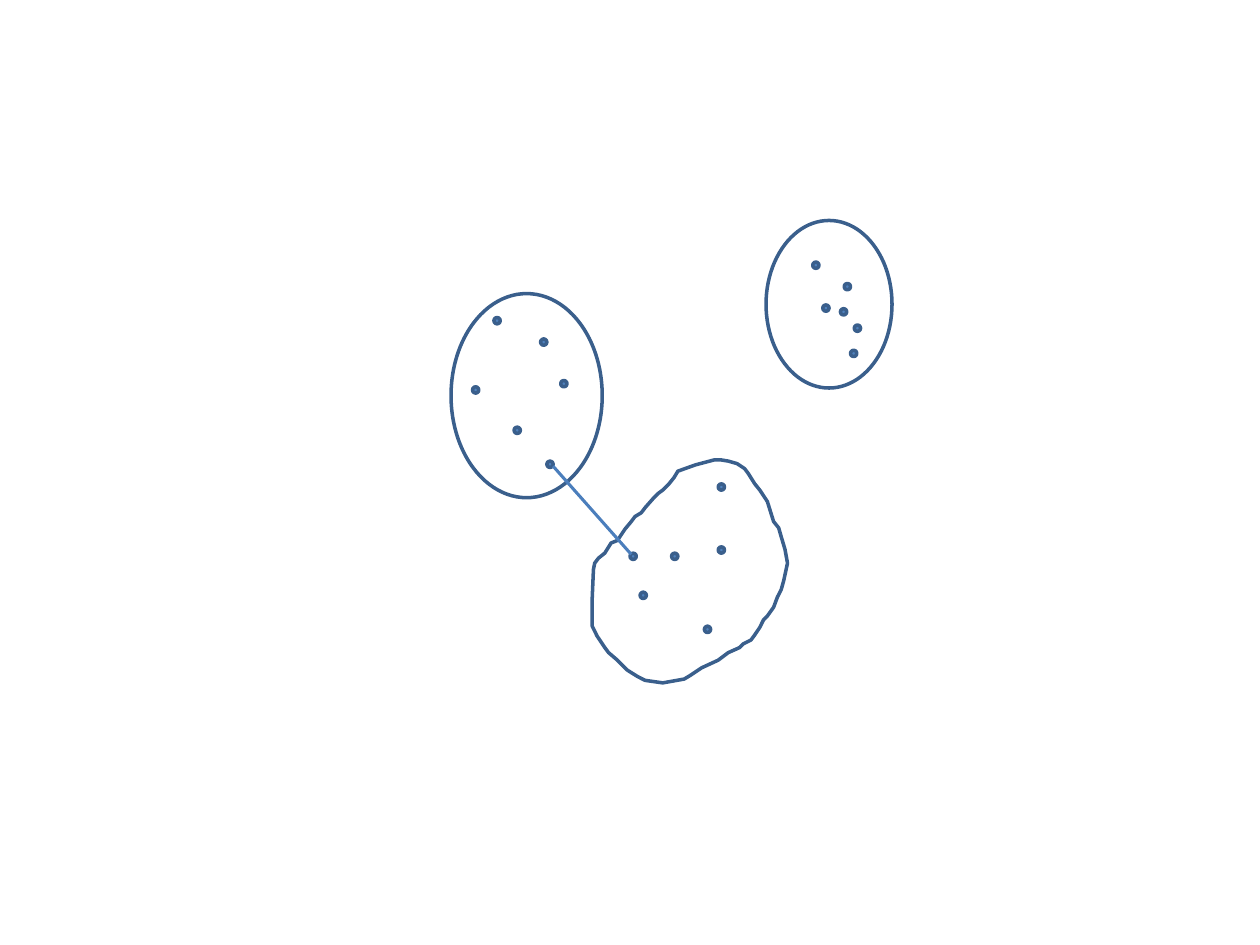
import pptx
import pptx.dml.color
import pptx.enum.shapes
import pptx.oxml
import pptx.oxml.ns
import pptx.util

COLORS = {"dot": "4F81BD", "outline": "3A5F8C", "link": "4B7EBC"}
GRID = pptx.util.Cm(0.0254)
DOT_SIZE = 5

LEFT_DOTS = [(392, 252), (375, 307), (408, 339), (434, 366), (429, 269), (445, 302)]
RIGHT_DOTS = [(670, 225), (678, 258), (645, 208), (653, 242), (667, 245), (675, 278)]
LOWER_DOTS = [(570, 384), (500, 439), (508, 470), (559, 497), (533, 439), (570, 434)]
OVALS = [(358, 233, 120, 162), (608, 175, 100, 133)]
LOWER_OUTLINE = [
    (538, 374), (552, 369), (567, 365), (572, 365), (578, 366), (585, 368), (591, 372),
    (594, 376), (599, 384), (603, 389), (609, 398), (614, 414), (618, 419),
    (620, 426), (623, 436), (625, 447), (622, 461), (620, 468), (617, 474),
    (614, 482), (609, 489), (606, 492), (603, 498), (599, 504), (596, 508),
    (590, 511), (587, 514), (578, 518), (570, 524), (557, 530), (548, 536),
    (543, 539), (526, 542), (512, 540), (506, 537), (498, 532), (490, 524),
    (483, 518), (480, 514), (474, 505), (470, 497), (470, 475), (471, 452),
    (472, 447), (475, 443), (480, 439), (485, 431), (490, 429), (496, 420),
    (501, 414), (504, 410), (509, 407), (512, 403), (519, 395), (522, 392),
    (526, 389), (531, 384), (535, 379),
]


def color(name):
    return pptx.dml.color.RGBColor.from_string(COLORS[name])


def style_shape(shape, fill=None):
    shape.shadow.inherit = False
    if fill:
        shape.fill.solid()
        shape.fill.fore_color.rgb = color(fill)
    else:
        shape.fill.background()
    shape.line.color.rgb = color("outline")
    shape.line.width = pptx.util.Pt(2)


def add_oval(slide, left, top, width, height, fill=None):
    shape = slide.shapes.add_shape(
        pptx.enum.shapes.MSO_SHAPE.OVAL,
        left * GRID, top * GRID, width * GRID, height * GRID,
    )
    style_shape(shape, fill)


def add_outline(slide, points):
    builder = slide.shapes.build_freeform(*points[0], scale=GRID)
    builder.add_line_segments(points[1:], close=True)
    style_shape(builder.convert_to_shape())


def add_link(slide, start, end):
    connector = slide.shapes.add_connector(
        pptx.enum.shapes.MSO_CONNECTOR.STRAIGHT,
        *(value * GRID for value in start + end),
    )
    connector.line.color.rgb = color("link")
    connector.line.width = pptx.util.Pt(1.75)
    properties = connector.element.find(pptx.oxml.ns.qn("p:spPr"))
    properties.append(pptx.oxml.parse_xml(
        f"<a:effectLst {pptx.oxml.ns.nsdecls('a')}/>"
    ))


def main():
    presentation = pptx.Presentation()
    presentation.slide_width = pptx.util.Cm(25.4)
    presentation.slide_height = pptx.util.Cm(19.05)
    slide = presentation.slides.add_slide(presentation.slide_layouts[6])
    for left, top in LEFT_DOTS + RIGHT_DOTS + LOWER_DOTS:
        add_oval(slide, left, top, DOT_SIZE, DOT_SIZE, "dot")
    for oval in OVALS:
        add_oval(slide, *oval)
    add_outline(slide, LOWER_OUTLINE)
    add_link(slide, (501, 440), (439, 370))
    presentation.save("out.pptx")


if __name__ == "__main__":
    main()
